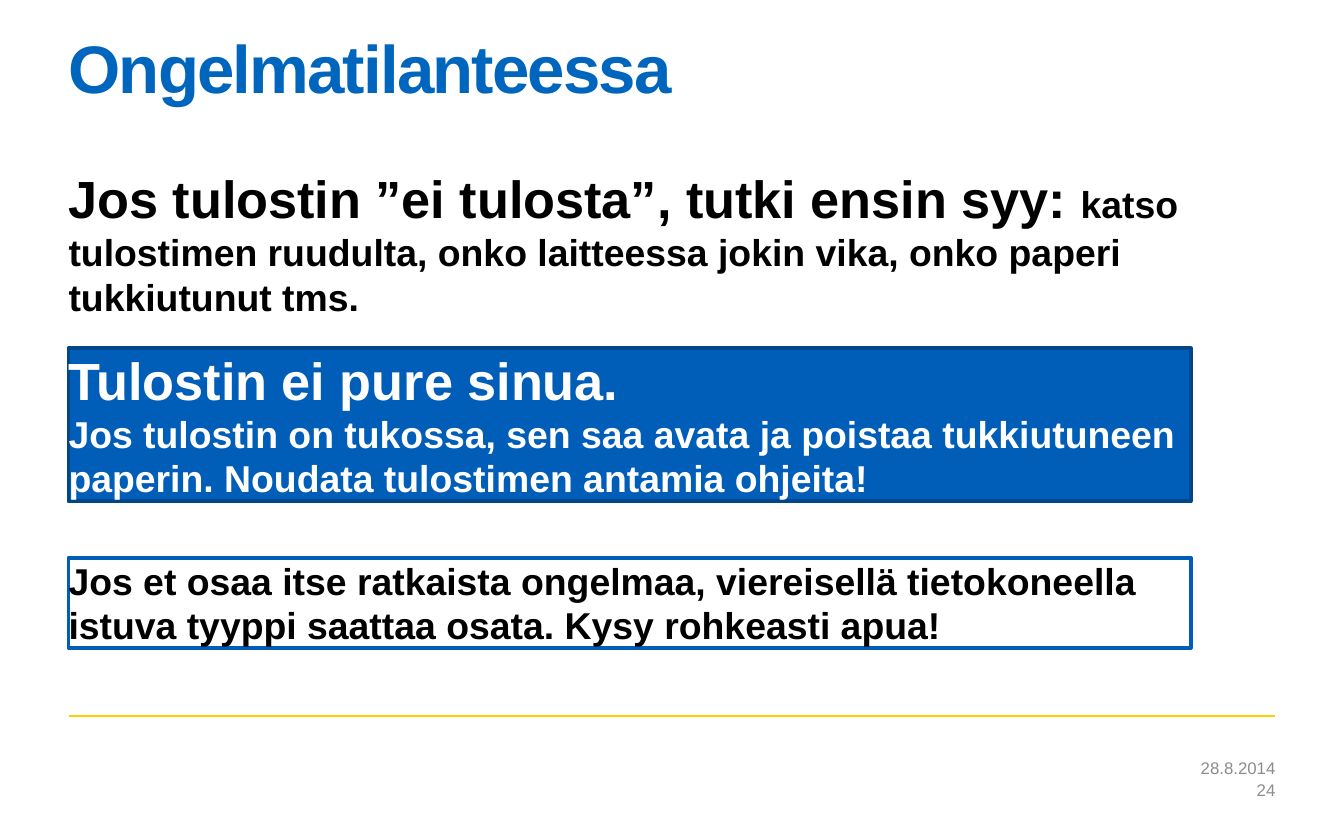
from lxml import etree
from pptx import Presentation
from pptx import util as u
from pptx.dml.color import RGBColor
from pptx.enum import shapes, text
from pptx.oxml import ns

COLORS = {
    "title": "0065BD", "blue": "005EB8", "dark_blue": "004688",
    "yellow": "FFCD00", "gray": "8C8C8C", "black": "000000", "white": "FFFFFF",
}
LEFT, RIGHT = 0.51, 9.49
BOX_WIDTH = 8.35


def color(name):
    return RGBColor.from_string(COLORS[name])


def write_text(shape, paragraphs, color_name, bold=True):
    """Fill a shape with paragraphs, each a list of (wording, size) runs."""
    frame = shape.text_frame
    frame.word_wrap = True
    frame.vertical_anchor = text.MSO_ANCHOR.TOP
    frame.margin_left = frame.margin_right = 0
    frame.margin_top = frame.margin_bottom = 0
    for index, runs in enumerate(paragraphs):
        paragraph = frame.add_paragraph() if index else frame.paragraphs[0]
        paragraph.alignment = text.PP_ALIGN.LEFT
        paragraph.font.name = "Arial"
        paragraph.font.bold = bold
        paragraph.font.color.rgb = color(color_name)
        for wording, size in runs:
            run = paragraph.add_run()
            run.text = wording
            run.font.size = u.Pt(size)
    return frame


presentation = Presentation()
presentation.slide_width = u.Inches(10)
presentation.slide_height = u.Inches(6.25)
slide = presentation.slides.add_slide(presentation.slide_layouts[6])

# Footer rule
rule = slide.shapes.add_connector(
    shapes.MSO_CONNECTOR.STRAIGHT,
    u.Inches(LEFT), u.Inches(5.33), u.Inches(RIGHT), u.Inches(5.33))
rule.line.color.rgb = color("yellow")
rule.line.width = u.Pt(1)
etree.SubElement(rule._element.spPr, ns.qn("a:effectLst"))

# Title, set tight
title = slide.shapes.add_textbox(
    u.Inches(LEFT), u.Inches(0.29), u.Inches(RIGHT - LEFT), u.Inches(1.09))
heading = write_text(title, [[("Ongelmatilanteessa", 36)]], "title").paragraphs[0]
heading.line_spacing = 0.85
heading.runs[0].font._element.set("spc", "-100")

# Introduction
introduction = slide.shapes.add_textbox(
    u.Inches(LEFT), u.Inches(1.24), u.Inches(RIGHT - LEFT), u.Inches(1.35))
write_text(introduction, [[
    ("Jos tulostin ”ei tulosta”, tutki ensin syy: ", 28),
    ("katso tulostimen ruudulta, onko laitteessa jokin vika, "
     "onko paperi tukkiutunut tms.", 20),
]], "black")

# Advice boxes: top, height, fill, line, text colour, paragraphs
advice = [
    (2.59, 1.14, "blue", "dark_blue", "white", [
        [("Tulostin ei pure sinua.", 28)],
        [("Jos tulostin on tukossa, sen saa avata ja poistaa tukkiutuneen "
          "paperin. Noudata tulostimen antamia ohjeita!", 20)],
    ]),
    (4.15, 0.67, "white", "blue", "black", [
        [("Jos et osaa itse ratkaista ongelmaa, viereisellä tietokoneella "
          "istuva tyyppi saattaa osata. Kysy rohkeasti apua!", 20)],
    ]),
]
for top, height, fill, line, text_color, paragraphs in advice:
    box = slide.shapes.add_shape(
        shapes.MSO_SHAPE.RECTANGLE,
        u.Inches(LEFT), u.Inches(top), u.Inches(BOX_WIDTH), u.Inches(height))
    box.shadow.inherit = False
    box.fill.solid()
    box.fill.fore_color.rgb = color(fill)
    box.line.color.rgb = color(line)
    box.line.width = u.Pt(2)
    frame = write_text(box, paragraphs, text_color)
    frame.auto_size = text.MSO_AUTO_SIZE.SHAPE_TO_FIT_TEXT

# Date and slide number
for wording, top, height in [("28.8.2014", 5.63, 0.17), ("24", 5.8, 0.15)]:
    footer = slide.shapes.add_textbox(
        u.Inches(5.53), u.Inches(top), u.Inches(RIGHT - 5.53), u.Inches(height))
    frame = write_text(footer, [[(wording, 9)]], "gray", bold=False)
    frame.vertical_anchor = text.MSO_ANCHOR.MIDDLE
    frame.paragraphs[0].alignment = text.PP_ALIGN.RIGHT

presentation.save("out.pptx")
